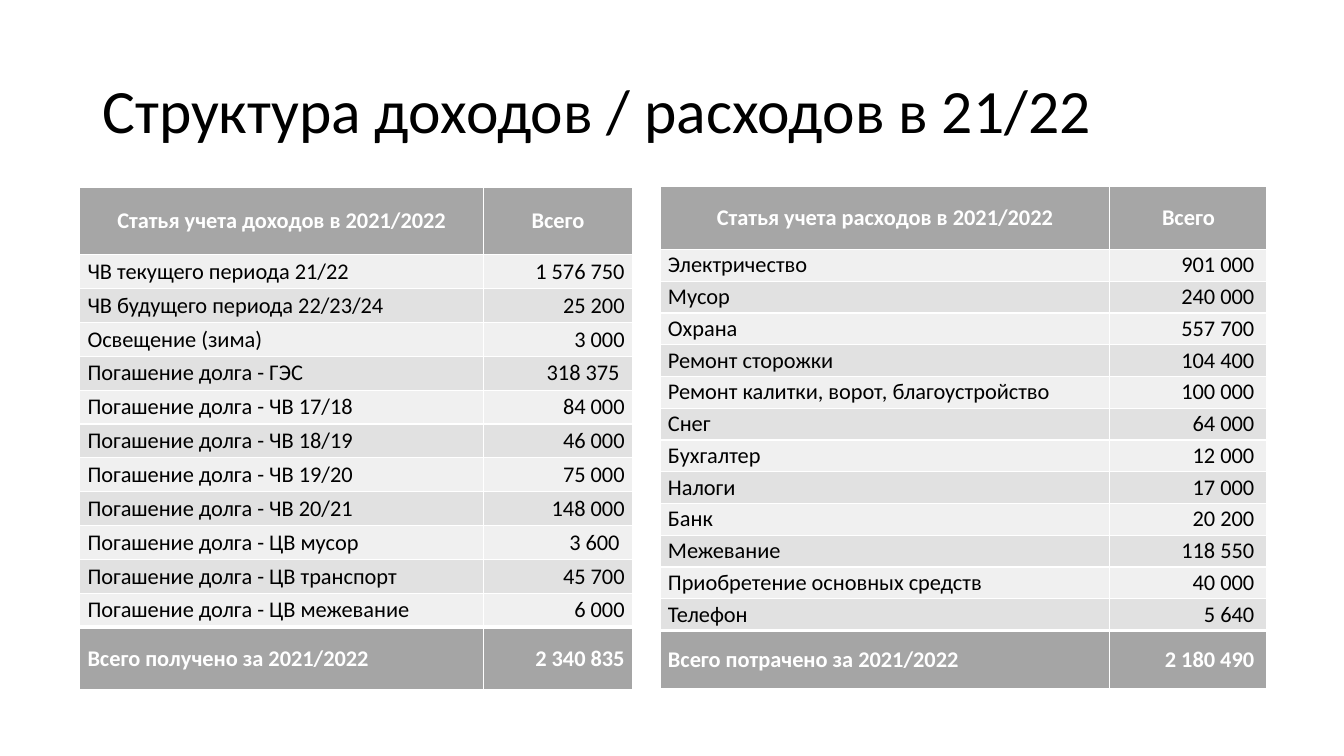
from lxml.etree import SubElement
from pptx import Presentation
from pptx.dml.color import RGBColor
from pptx.enum.text import MSO_ANCHOR as ANCHOR, PP_ALIGN as ALIGN
from pptx.oxml.ns import qn
from pptx.util import Pt

FONT = "Calibri"
COLORS = {
    "head": "A6A6A6", "total": "A5A5A5", "odd": "F0F0F0", "even": "E1E1E1",
    "white": "FFFFFF", "black": "000000",
}
SIDE_MARGIN, SPACE_WIDTH = 5.5, 3.6

INCOME = [
    ("ЧВ текущего периода 21/22", 1576750),
    ("ЧВ будущего периода 22/23/24", 25200),
    ("Освещение (зима)", 3000),
    ("Погашение долга - ГЭС", 318375),
    ("Погашение долга - ЧВ 17/18", 84000),
    ("Погашение долга - ЧВ 18/19", 46000),
    ("Погашение долга - ЧВ 19/20", 75000),
    ("Погашение долга - ЧВ 20/21", 148000),
    ("Погашение долга - ЦВ мусор", 3600),
    ("Погашение долга - ЦВ транспорт", 45700),
    ("Погашение долга - ЦВ межевание", 6000),
    ("Всего получено за 2021/2022", 2340835),
]
EXPENSES = [
    ("Электричество", 901000),
    ("Мусор", 240000),
    ("Охрана", 557700),
    ("Ремонт сторожки", 104400),
    ("Ремонт калитки, ворот, благоустройство", 100000),
    ("Снег", 64000),
    ("Бухгалтер", 12000),
    ("Налоги", 17000),
    ("Банк", 20200),
    ("Межевание", 118550),
    ("Приобретение основных средств", 40000),
    ("Телефон", 5640),
    ("Всего потрачено за 2021/2022", 2180490),
]


def rgb(name):
    return RGBColor.from_string(COLORS[name])


def add_run(p, text, size, color, bold=False):
    r = p.add_run()
    r.text = text
    r.font.name, r.font.size, r.font.bold = FONT, Pt(size), bold
    r.font.color.rgb = rgb(color)


def set_borders(cell, top):
    tc_pr = cell._tc.get_or_add_tcPr()
    for i, (side, width) in enumerate(zip("LRTB", (1, 1, top, 1))):
        ln = SubElement(tc_pr, qn(f"a:ln{side}"), w=str(Pt(width)))
        fill = SubElement(ln, qn("a:solidFill"))
        SubElement(fill, qn("a:srgbClr"), val=COLORS["white"])
        tc_pr.insert(i, ln)


def fill_cell(cell, text, fill, align, strong, top=1, indent=0):
    cell.fill.solid()
    cell.fill.fore_color.rgb = rgb(fill)
    cell.vertical_anchor = ANCHOR.MIDDLE
    cell.margin_left = Pt(SIDE_MARGIN)
    cell.margin_right = Pt(SIDE_MARGIN + indent)
    cell.margin_top = cell.margin_bottom = 0
    set_borders(cell, top)
    p = cell.text_frame.paragraphs[0]
    p.alignment = align
    add_run(p, text, 16, "white" if strong else "black", strong)


def add_title(s, text, x, y, w, h):
    sp = s.shapes.title
    sp.left, sp.top, sp.width, sp.height = Pt(x), Pt(y), Pt(w), Pt(h)
    tf = sp.text_frame
    tf.word_wrap = True
    tf.vertical_anchor = ANCHOR.MIDDLE
    p = tf.paragraphs[0]
    p.alignment, p.line_spacing = ALIGN.LEFT, 0.9
    add_run(p, text, 44, "black")


def add_budget(s, heading, items, x, y, cols, head_h, row_h, total_h, indented):
    heights = [head_h] + [row_h] * (len(items) - 1) + [total_h]
    table = s.shapes.add_table(len(heights), 2, Pt(x), Pt(y),
                               Pt(sum(cols)), Pt(sum(heights))).table
    table.horz_banding = False
    for col, width in zip(table.columns, cols):
        col.width = Pt(width)
    for row, height in zip(table.rows, heights):
        row.height = Pt(height)
    for c, text in enumerate((heading, "Всего")):
        fill_cell(table.cell(0, c), text, "head", ALIGN.CENTER, True)
    for i, (name, amount) in enumerate(items, 1):
        total = i == len(items)
        fill = "total" if total else "odd" if i % 2 else "even"
        top = 3 if total else 1
        indent = SPACE_WIDTH if i in indented else 0
        value = f"{amount:,}".replace(",", " ")
        fill_cell(table.cell(i, 0), name, fill, ALIGN.LEFT, total, top)
        fill_cell(table.cell(i, 1), value, fill, ALIGN.RIGHT, total, top, indent)


def main():
    prs = Presentation()
    prs.slide_width, prs.slide_height = Pt(960), Pt(540)
    s = prs.slides.add_slide(prs.slide_layouts[5])
    add_title(s, "Структура доходов / расходов в 21/22", 66, 28.8, 828, 104.4)
    add_budget(s, "Статья учета расходов в 2021/2022", EXPENSES, 471.6, 133.2,
               (321.2, 112.2), 45, 22.7, 41.8, range(1, len(EXPENSES) + 1))
    add_budget(s, "Статья учета доходов в 2021/2022", INCOME, 57, 134,
               (288.5, 106.2), 48, 24.2, 44.6, (4, 9))
    prs.save("out.pptx")


if __name__ == "__main__":
    main()
